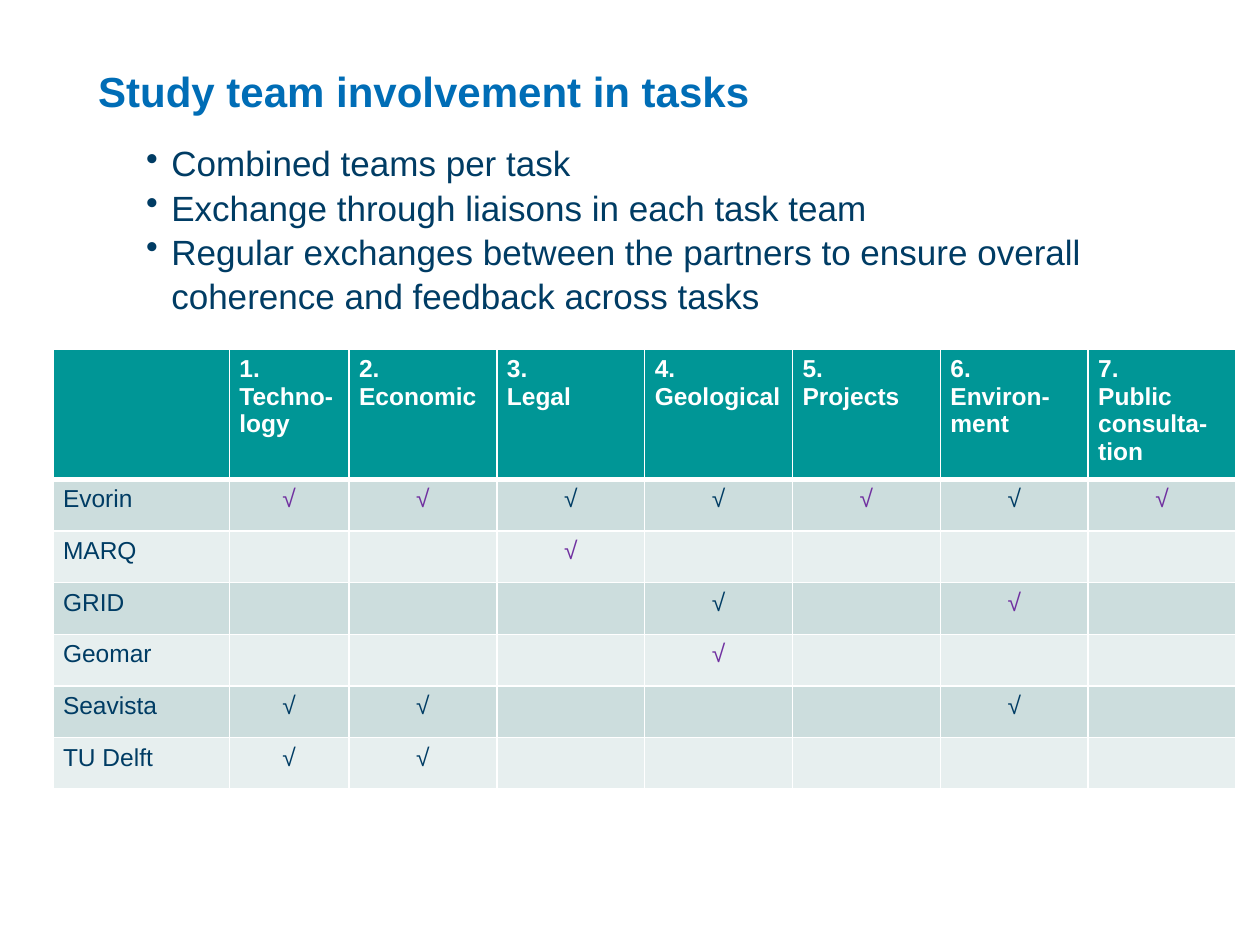
import pptx
import pptx.dml.color
import pptx.enum.text
import pptx.oxml
import pptx.oxml.ns
import pptx.util
from pptx.util import Inches

RGBColor = pptx.dml.color.RGBColor
PP_ALIGN = pptx.enum.text.PP_ALIGN
BLUE = RGBColor(0x00, 0x6D, 0xB6)
NAVY = RGBColor(0x00, 0x3C, 0x64)
PURPLE = RGBColor(0x70, 0x30, 0xA0)
TEAL = RGBColor(0x00, 0x96, 0x96)
WHITE = RGBColor(0xFF, 0xFF, 0xFF)
BANDS = [RGBColor(0xCC, 0xDD, 0xDD), RGBColor(0xE7, 0xEF, 0xEF)]
NS = pptx.oxml.ns.nsdecls("a")

BULLETS = [
    "Combined teams per task",
    "Exchange through liaisons in each task team",
    "Regular exchanges between the partners to ensure overall coherence and feedback across tasks",
]
TASKS = ["", "1. Techno-logy", "2. Economic", "3.\nLegal", "4. Geological",
         "5.\nProjects", "6.\nEnviron-ment", "7.\nPublic consulta-tion"]
LEAD, SUPPORT = "L", "S"
PARTNERS = [
    ("Evorin", "LLSSLSL"),
    ("MARQ", "--L----"),
    ("GRID", "---S-L-"),
    ("Geomar", "---L---"),
    ("Seavista", "SS---S-"),
    ("TU Delft", "SS-----"),
]
MARK_COLORS = {LEAD: PURPLE, SUPPORT: NAVY}


def write_text(tf, text, size=14, color=NAVY, bold=False, align=PP_ALIGN.LEFT,
               spacing=None, bullet=False):
    """Fill a text frame with one paragraph per line of text."""
    for i, line in enumerate(text.split("\n")):
        p = tf.paragraphs[0] if i == 0 else tf.add_paragraph()
        p.alignment = align
        if spacing:
            p.line_spacing = spacing
        if bullet:
            pPr = p._p.get_or_add_pPr()
            pPr.set("marL", str(Inches(0.2)))
            pPr.set("indent", str(-Inches(0.2)))
            pPr.append(pptx.oxml.parse_xml(
                f'<a:buClr {NS}><a:srgbClr val="{color}"/></a:buClr>'))
            pPr.append(pptx.oxml.parse_xml(f'<a:buChar {NS} char="•"/>'))
        r = p.add_run()
        r.text = line
        r.font.name = "Arial"
        r.font.size = pptx.util.Pt(size)
        r.font.bold = bold
        r.font.color.rgb = color


def add_text(s, x, y, w, h, text, **fmt):
    """Add a wrapping text box without margins."""
    tf = s.shapes.add_textbox(Inches(x), Inches(y), Inches(w), Inches(h)).text_frame
    tf.word_wrap = True
    tf.margin_left = tf.margin_top = tf.margin_right = tf.margin_bottom = 0
    write_text(tf, text, **fmt)


def style_cell(cell, fill, bottom_pt=1, top_pt=1):
    """Set white borders, margins and fill of a cell."""
    cell.margin_left = cell.margin_right = Inches(0.08)
    cell.margin_top = cell.margin_bottom = Inches(0.05)
    tcPr = cell._tc.get_or_add_tcPr()
    for side, width in (("L", 1), ("R", 1), ("T", top_pt), ("B", bottom_pt)):
        tcPr.append(pptx.oxml.parse_xml(
            f'<a:ln{side} {NS} w="{pptx.util.Pt(width)}"><a:solidFill>'
            f'<a:srgbClr val="{WHITE}"/></a:solidFill></a:ln{side}>'))
    cell.fill.solid()
    cell.fill.fore_color.rgb = fill


def add_involvement_table(s):
    """Add the table of partners against tasks."""
    table_width, first_widths = 9.39, [1.4, 0.95]
    rest = len(TASKS) - len(first_widths)
    widths = first_widths + [(table_width - sum(first_widths)) / rest] * rest
    row_height, row_count = 0.41, len(PARTNERS) + 1
    table = s.shapes.add_table(row_count, len(widths), Inches(0.42), Inches(2.77),
                               Inches(table_width),
                               Inches(row_height * row_count)).table
    for column, width in zip(table.columns, widths):
        column.width = Inches(width)
    for row in table.rows:
        row.height = Inches(row_height)
    for col, task in enumerate(TASKS):
        cell = table.cell(0, col)
        style_cell(cell, TEAL, bottom_pt=3)
        if task:
            write_text(cell.text_frame, task, color=WHITE, bold=True)
    for row, (partner, roles) in enumerate(PARTNERS, start=1):
        for col in range(len(widths)):
            style_cell(table.cell(row, col), BANDS[(row - 1) % 2],
                       top_pt=3 if row == 1 else 1)
        write_text(table.cell(row, 0).text_frame, partner)
        for col, role in enumerate(roles, start=1):
            if role in MARK_COLORS:
                write_text(table.cell(row, col).text_frame, "√",
                           color=MARK_COLORS[role], align=PP_ALIGN.CENTER)


def main():
    """Build and save the slide."""
    prs = pptx.Presentation()
    prs.slide_width, prs.slide_height = Inches(10), Inches(7.5)
    s = prs.slides.add_slide(prs.slide_layouts[6])
    add_text(s, 0.78, 0.5, 8.27, 0.5, "Study team involvement in tasks",
             size=24, color=BLUE, bold=True, spacing=pptx.util.Pt(30))
    add_involvement_table(s)
    add_text(s, 1.16, 1.11, 8.27, 4.92, "\n".join(BULLETS),
             size=20, spacing=1.05, bullet=True)
    prs.save("out.pptx")


if __name__ == "__main__":
    main()
